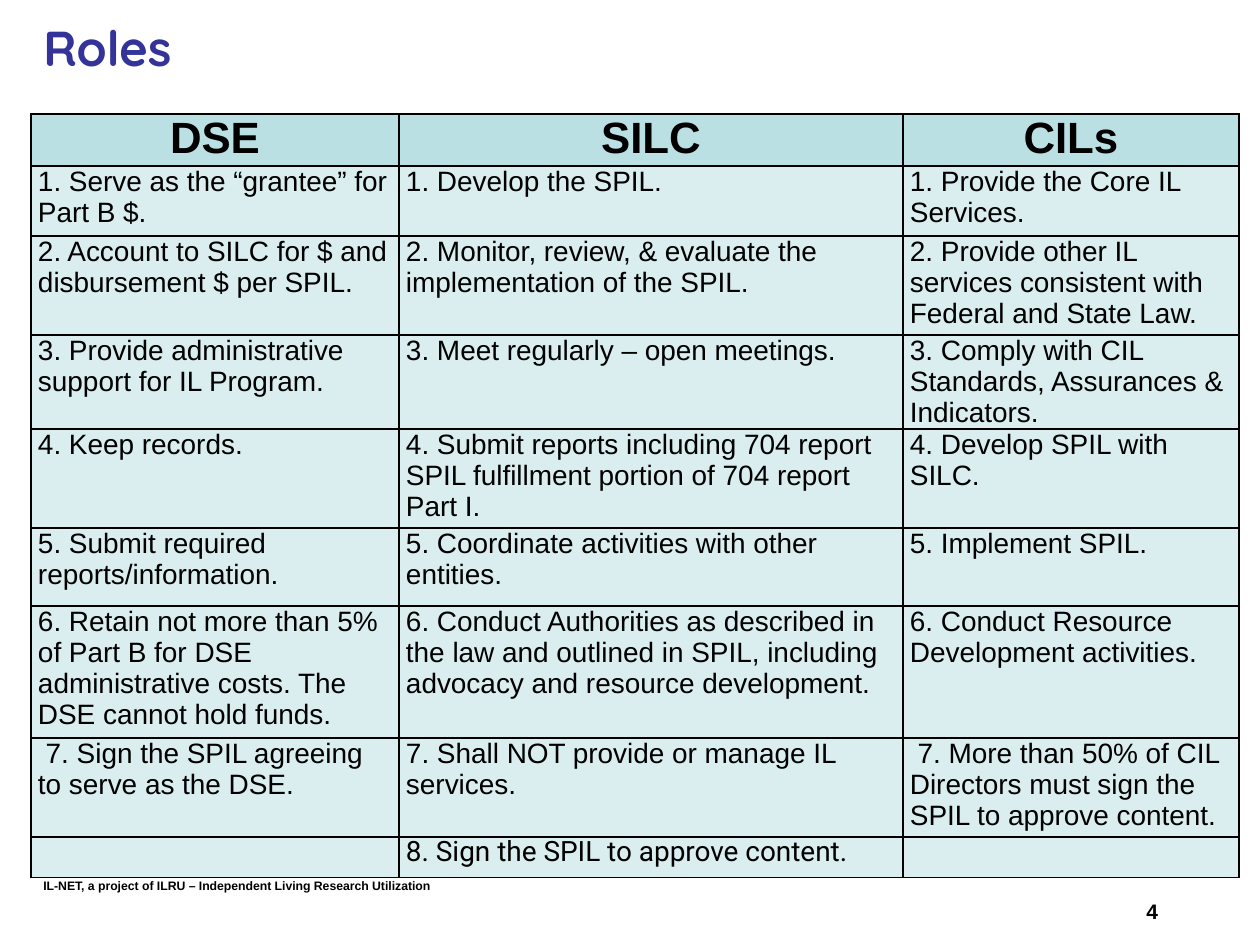
"""Build the Roles slide: duties of the DSE, SILC and CILs side by side."""
from lxml import etree
from pptx import Presentation, util as u
from pptx.dml.color import RGBColor
from pptx.enum import text
from pptx.oxml.ns import qn

PX = 914400 // 126
HEADINGS = ["DSE", "SILC", "CILs"]
COLUMN_WIDTHS = [368, 504, 336]
ROW_HEIGHTS = [52, 70, 99, 94, 99, 78, 132, 99, 41]
DUTIES = [
    ["1. Serve as the “grantee” for Part B $.",
     "1. Develop the SPIL.",
     "1. Provide the Core IL Services."],
    ["2. Account to SILC for $ and disbursement $ per SPIL.",
     "2. Monitor, review, & evaluate the implementation of the SPIL.",
     "2. Provide other IL services consistent with Federal and State Law."],
    ["3. Provide administrative support for IL Program.",
     "3. Meet regularly – open meetings.",
     "3. Comply with CIL Standards, Assurances & Indicators."],
    ["4. Keep records.",
     "4. Submit reports including 704 report SPIL fulfillment portion of 704 report Part I.",
     "4. Develop SPIL with SILC."],
    ["5. Submit required reports/information.",
     "5. Coordinate activities with other entities.",
     "5. Implement SPIL."],
    ["6. Retain not more than 5% of Part B for DSE administrative costs. The DSE cannot hold funds.",
     "6. Conduct Authorities as described in the law and outlined in SPIL, "
     "including advocacy and resource development.",
     "6. Conduct Resource Development activities."],
    [" 7. Sign the SPIL agreeing to serve as the DSE.",
     "7. Shall NOT provide or manage IL services.",
     " 7. More than 50% of CIL Directors must sign the SPIL to approve content."],
    ["", "8. Sign the SPIL to approve content.", ""],
]


def px(length):
    return u.Emu(length * PX)


def color(value):
    return RGBColor.from_string(value)


class SlideBuilder:
    """Hold the slide's style and add its elements."""
    ink = "000000"
    title_ink = "333399"
    header_fill = "BBE0E3"
    body_fill = "DAEDEF"
    font = "Arial"

    def __init__(self, deck):
        self.page = deck.slides.add_slide(deck.slide_layouts[6])

    def style(self, para, size, bold=False, font=None, ink=None):
        for span in para.runs:
            span.font.name = font or self.font
            span.font.size = u.Pt(size)
            span.font.bold = bold
            span.font.color.rgb = color(ink or self.ink)

    def label(self, words, left, top, width, height, size, wrap=True,
              anchor=text.MSO_ANCHOR.TOP, **look):
        box = self.page.shapes.add_textbox(px(left), px(top), px(width), px(height))
        frame = box.text_frame
        frame.word_wrap = wrap
        frame.vertical_anchor = anchor
        frame.text = words
        self.style(frame.paragraphs[0], size, bold=True, **look)

    def border(self, cell):
        properties = cell._tc.get_or_add_tcPr()
        for position, side in enumerate(("a:lnL", "a:lnR", "a:lnT", "a:lnB")):
            line = etree.Element(qn(side), w=str(u.Pt(1)))
            fill = etree.SubElement(line, qn("a:solidFill"))
            etree.SubElement(fill, qn("a:srgbClr"), val=self.ink)
            properties.insert(position, line)

    def cell(self, cell, words, header, font):
        cell.fill.solid()
        cell.fill.fore_color.rgb = color(self.header_fill if header else self.body_fill)
        cell.margin_left = cell.margin_right = px(7)
        cell.margin_top = cell.margin_bottom = 0
        cell.text = words
        para = cell.text_frame.paragraphs[0]
        para.line_spacing = u.Pt(28 if header else 17.8)
        if header:
            para.alignment = text.PP_ALIGN.CENTER
        self.style(para, 25 if header else 16, bold=header, font=font)
        self.border(cell)

    def table(self, rows, left, top, widths, heights):
        frame = self.page.shapes.add_table(
            len(rows), len(widths), px(left), px(top), px(sum(widths)), px(sum(heights)))
        grid = frame.table
        for column, width in zip(grid.columns, widths):
            column.width = px(width)
        last = len(rows) - 1
        for index, (row, height, entries) in enumerate(zip(grid.rows, heights, rows)):
            row.height = px(height)
            for cell, words in zip(row.cells, entries):
                self.cell(cell, words, index == 0, "Roboto" if index == last else None)


def main():
    deck = Presentation()
    deck.slide_width, deck.slide_height = px(1260), px(945)
    slide = SlideBuilder(deck)
    slide.label("Roles", 31, 10, 1113, 73, 28, anchor=text.MSO_ANCHOR.MIDDLE,
                font="Quicksand", ink=slide.title_ink)
    slide.table([HEADINGS] + DUTIES, 31, 114, COLUMN_WIDTHS, ROW_HEIGHTS)
    slide.label("IL-NET, a project of ILRU – Independent Living Research Utilization",
                31, 872, 630, 28, 7)
    slide.label("4", 1134, 892, 37, 38, 12, wrap=False)
    deck.save("out.pptx")


if __name__ == "__main__":
    main()
